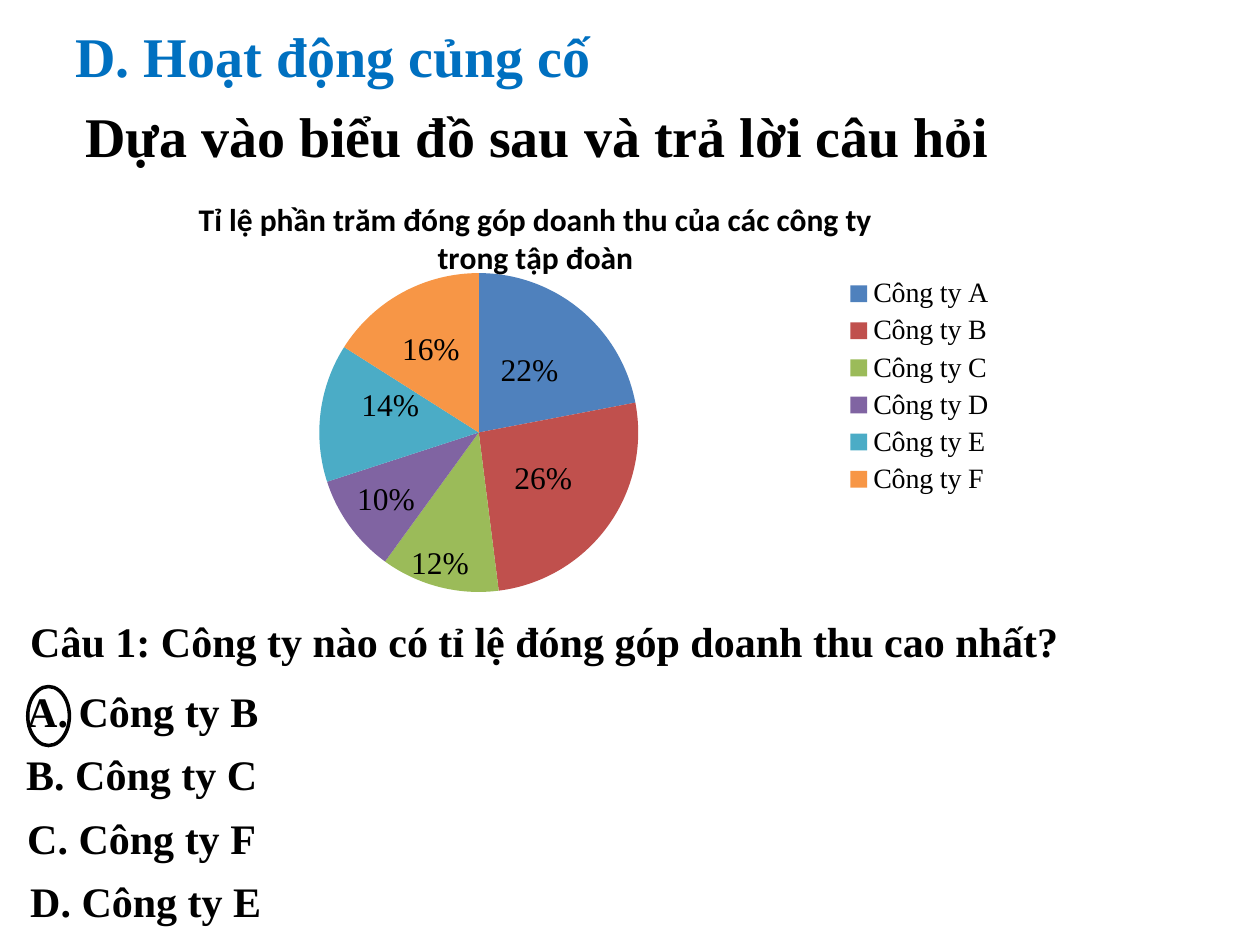
import pptx
import pptx.chart.data
import pptx.dml.color
import pptx.enum.chart
import pptx.enum.shapes
import pptx.enum.text
import pptx.oxml
import pptx.oxml.ns
import pptx.util
from pptx.util import Cm

SERIF = "Times New Roman"
COLORS = {"ink": "000000", "head": "0070C0"}
# Company, share in percent, slice colour, label shift (x, y) as part of the chart
SHARES = [
    ("Công ty A", 22, "4F81BD", (0, 0)),
    ("Công ty B", 26, "C0504D", (0, 0)),
    ("Công ty C", 12, "9BBB59", (-0.02, 0.13)),
    ("Công ty D", 10, "8064A2", (-0.03, 0.05)),
    ("Công ty E", 14, "4BACC6", (-0.01, -0.04)),
    ("Công ty F", 16, "F79646", (-0.01, -0.03)),
]
# Answer text and its left edge in cm
ANSWERS = [("A. Công ty B", 0.3), ("B. Công ty C", 0.28),
           ("C. Công ty F", 0.3), ("D. Công ty E", 0.36)]


def rgb(code):
    return pptx.dml.color.RGBColor.from_string(code)


def style(font, size, name=SERIF, color="ink", bold=False):
    font.size = pptx.util.Pt(size)
    font.name = name
    font.bold = bold
    font.color.rgb = rgb(COLORS[color])


def add_text(slide, text, left, top, width, height, size, color="ink"):
    box = slide.shapes.add_textbox(Cm(left), Cm(top), Cm(width), Cm(height))
    frame = box.text_frame
    frame.word_wrap = True
    frame.auto_size = pptx.enum.text.MSO_AUTO_SIZE.SHAPE_TO_FIT_TEXT
    line = frame.paragraphs[0]
    line.text = text
    style(line.font, size, color=color, bold=True)


def layout(marks):
    """Make a manual chart layout from pairs of tag and value."""
    space = pptx.oxml.ns.nsdecls("c")
    body = "".join(f'<c:{tag} val="{val}"/>' for tag, val in marks)
    return pptx.oxml.parse_xml(
        f"<c:layout {space}><c:manualLayout>{body}</c:manualLayout></c:layout>")


def set_labels(series):
    center = pptx.enum.chart.XL_LABEL_POSITION.CENTER
    labels = series.data_labels
    labels.show_percentage = True
    labels.show_value = False
    labels.number_format = "0%"
    labels.number_format_is_linked = False
    labels.position = center
    style(labels.font, 18)

    # Slice colours and shifted labels
    for index, (_, _, color, shift) in enumerate(SHARES):
        point = series.points[index]
        point.format.fill.solid()
        point.format.fill.fore_color.rgb = rgb(color)
        if shift == (0, 0):
            continue
        style(point.data_label.font, 18)
        point.data_label.position = center
        node = labels._element.xpath(f"c:dLbl[c:idx/@val='{index}']")[0]
        node.xpath("c:idx")[0].addnext(layout(zip("xy", shift)))
        node.xpath("c:showVal")[0].set("val", "0")
        node.xpath("c:showPercent")[0].set("val", "1")


def add_pie(slide):
    data = pptx.chart.data.CategoryChartData()
    data.categories = [row[0] for row in SHARES]
    data.add_series("Series 1", [row[1] for row in SHARES])
    kind = pptx.enum.chart.XL_CHART_TYPE.PIE
    chart = slide.shapes.add_chart(
        kind, Cm(1.27), Cm(3.56), Cm(19.05), Cm(8.46), data).chart
    style(chart.font, 10, "Calibri")

    # Title
    chart.has_title = True
    title = chart.chart_title.text_frame
    title.text = "Tỉ lệ phần trăm đóng góp doanh thu của các công ty trong tập đoàn"
    style(title.paragraphs[0].font, 18, "Calibri", bold=True)

    # Legend
    chart.has_legend = True
    chart.legend.position = pptx.enum.chart.XL_LEGEND_POSITION.RIGHT
    chart.legend.include_in_layout = True
    style(chart.legend.font, 16)

    # Plot area
    plot = chart.plots[0]
    plot.vary_by_categories = True
    set_labels(plot.series[0])
    area = chart._chartSpace.xpath(".//c:plotArea")[0]
    for old in area.xpath("c:layout"):
        area.remove(old)
    area.insert(0, layout([
        ("layoutTarget", "inner"), ("xMode", "edge"), ("yMode", "edge"),
        ("x", 0.27), ("y", 0.23), ("w", 0.34), ("h", 0.76)]))


def add_ring(slide):
    oval = pptx.enum.shapes.MSO_SHAPE.OVAL
    ring = slide.shapes.add_shape(oval, Cm(0.56), Cm(13.84), Cm(0.84), Cm(1.19))
    ring.shadow.inherit = False
    ring.fill.background()
    ring.line.color.rgb = rgb(COLORS["ink"])
    ring.line.width = pptx.util.Pt(2)


def main():
    deck = pptx.Presentation()
    deck.slide_width, deck.slide_height = Cm(25.4), Cm(19.05)
    slide = deck.slides.add_slide(deck.slide_layouts[6])

    # Chart and headings
    add_pie(slide)
    add_text(slide, "D. Hoạt động củng cố", 1.27, 0.3, 17.35, 1.63, 32, "head")
    add_text(slide, "Dựa vào biểu đồ sau và trả lời câu hỏi",
             1.47, 1.93, 22.23, 1.63, 32)

    # Question and answers
    add_text(slide, "Câu 1: Công ty nào có tỉ lệ đóng góp doanh thu cao nhất?",
             0.36, 12.29, 23.06, 1.27, 24)
    for row, (text, left) in enumerate(ANSWERS):
        add_text(slide, text, left, 13.69 + 1.28 * row, 6.05, 1.27, 24)

    # Ring round the right answer
    add_ring(slide)
    deck.save("out.pptx")


if __name__ == "__main__":
    main()
